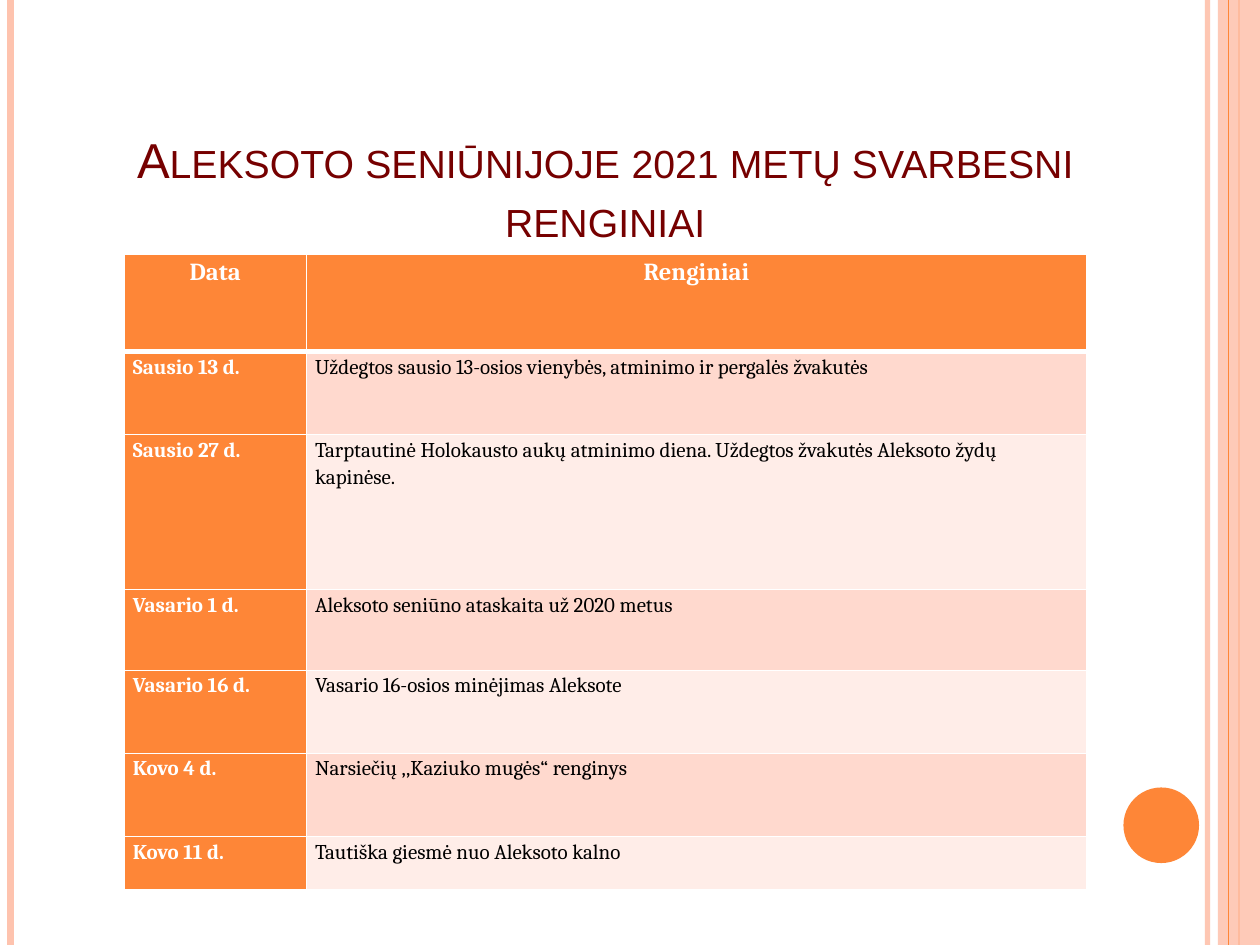
import pptx
import pptx.util
import pptx.dml.color
import pptx.enum.shapes
import pptx.enum.text
import pptx.oxml
import pptx.oxml.ns

Pt = pptx.util.Pt
ALIGN = pptx.enum.text.PP_ALIGN
SHAPE = pptx.enum.shapes.MSO_SHAPE

COLORS = {"orange": "FE8637", "peach": "FEC3AE", "band": "FFD9CE", "pale": "FFEDE8",
          "maroon": "760000", "white": "FFFFFF", "black": "000000"}
WIDTH, HEIGHT = 720, 540

TITLE = "Aleksoto seniūnijoje 2021 metų svarbesni renginiai"
EVENTS = [
    ("Data", "Renginiai", 55.4),
    ("Sausio 13 d.", "Uždegtos sausio 13-osios vienybės, atminimo ir pergalės žvakutės", 47.5),
    ("Sausio 27 d.", "Tarptautinė Holokausto aukų atminimo diena. "
                     "Uždegtos žvakutės Aleksoto žydų kapinėse.", 88.6),
    ("Vasario 1 d.", "Aleksoto seniūno ataskaita už 2020 metus", 46.1),
    ("Vasario 16 d.", "Vasario 16-osios minėjimas Aleksote", 47.5),
    ("Kovo 4 d.", "Narsiečių ,,Kaziuko mugės“ renginys", 47.5),
    ("Kovo 11 d.", "Tautiška giesmė nuo Aleksoto kalno", 30.2),
]
COLUMN_WIDTHS = (104.2, 445.8)
TABLE_LEFT, TABLE_TOP = 70.9, 145.5

STRIPES = [(690, 3, "peach", 93), (6, 4.5, "peach", 100), (708, 1.5, "orange", 100)]
EDGE_STRIPE = (702, 0.75, "orange", 100)
EDGE_BAND = (696, 0, 24, HEIGHT)
DISC = (642, 450, 43.2, 43.2)


def rgb(name):
    return pptx.dml.color.RGBColor.from_string(COLORS[name])


def set_alpha(element, percent):
    color = element.find(".//" + pptx.oxml.ns.qn("a:srgbClr"))
    color.append(pptx.oxml.parse_xml(
        f'<a:alpha {pptx.oxml.ns.nsdecls("a")} val="{percent * 1000}"/>'))


def add_stripe(slide, x, width, color, alpha):
    stripe = slide.shapes.add_connector(
        pptx.enum.shapes.MSO_CONNECTOR.STRAIGHT, Pt(x), Pt(0), Pt(x), Pt(HEIGHT))
    stripe.line.width = Pt(width)
    stripe.line.color.rgb = rgb(color)
    properties = stripe._element.spPr
    if alpha < 100:
        set_alpha(properties, alpha)
    properties.append(pptx.oxml.parse_xml(f'<a:effectLst {pptx.oxml.ns.nsdecls("a")}/>'))


def add_solid(slide, preset, box, color):
    solid = slide.shapes.add_shape(preset, *map(Pt, box))
    solid.shadow.inherit = False
    solid.fill.solid()
    solid.fill.fore_color.rgb = rgb(color)
    solid.line.fill.background()
    return solid


def style_text(paragraph, font_name, size, color, bold, align):
    paragraph.alignment = align
    font = paragraph.runs[0].font
    font.name, font.size, font.bold = font_name, Pt(size), bold
    font.color.rgb = rgb(color)


def set_borders(cell, widths):
    properties = cell._tc.get_or_add_tcPr()
    for side, width in zip("LRTB", widths):
        properties.append(pptx.oxml.parse_xml(
            f'<a:ln{side} {pptx.oxml.ns.nsdecls("a")} w="{Pt(width)}"><a:solidFill>'
            f'<a:srgbClr val="{COLORS["white"]}"/></a:solidFill></a:ln{side}>'))


def add_title(slide):
    title = slide.shapes.title
    title.left, title.top, title.width, title.height = map(Pt, (22.3, 25.9, 647.3, 118.8))
    frame = title.text_frame
    frame.text = TITLE
    frame.word_wrap = True
    frame.auto_size = pptx.enum.text.MSO_AUTO_SIZE.NONE
    frame.vertical_anchor = pptx.enum.text.MSO_ANCHOR.BOTTOM
    heading = frame.paragraphs[0]
    style_text(heading, "Arial", 28, "maroon", False, ALIGN.CENTER)
    heading.runs[0]._r.get_or_add_rPr().set("cap", "small")


def add_events(slide):
    heights = [height for _, _, height in EVENTS]
    events = slide.shapes.add_table(
        len(EVENTS), len(COLUMN_WIDTHS), Pt(TABLE_LEFT), Pt(TABLE_TOP),
        Pt(sum(COLUMN_WIDTHS)), Pt(sum(heights))).table
    for column, width in zip(events.columns, COLUMN_WIDTHS):
        column.width = Pt(width)
    for r, (date, event, height) in enumerate(EVENTS):
        events.rows[r].height = Pt(height)
        for c, text in enumerate((date, event)):
            header, strong = r == 0, r == 0 or c == 0
            cell = events.cell(r, c)
            cell.margin_left = cell.margin_right = Pt(5)
            cell.margin_top = cell.margin_bottom = Pt(0)
            set_borders(cell, (1, 1, 3 if r == 1 else 1, 3 if header else 1))
            cell.fill.solid()
            cell.fill.fore_color.rgb = rgb(
                "orange" if strong else "band" if r % 2 else "pale")
            cell.text_frame.text = text
            paragraph = cell.text_frame.paragraphs[0]
            paragraph.line_spacing = 1.15
            style_text(paragraph, "Cambria", 14 if header else 12,
                       "white" if strong else "black", strong,
                       ALIGN.CENTER if header else ALIGN.LEFT)


def main():
    deck = pptx.Presentation()
    deck.slide_width, deck.slide_height = Pt(WIDTH), Pt(HEIGHT)
    slide = deck.slides.add_slide(deck.slide_layouts[5])
    for stripe in STRIPES:
        add_stripe(slide, *stripe)
    band = add_solid(slide, SHAPE.RECTANGLE, EDGE_BAND, "peach")
    set_alpha(band._element.spPr, 87)
    add_stripe(slide, *EDGE_STRIPE)
    add_solid(slide, SHAPE.OVAL, DISC, "orange")
    add_title(slide)
    add_events(slide)
    deck.save("out.pptx")


if __name__ == "__main__":
    main()
